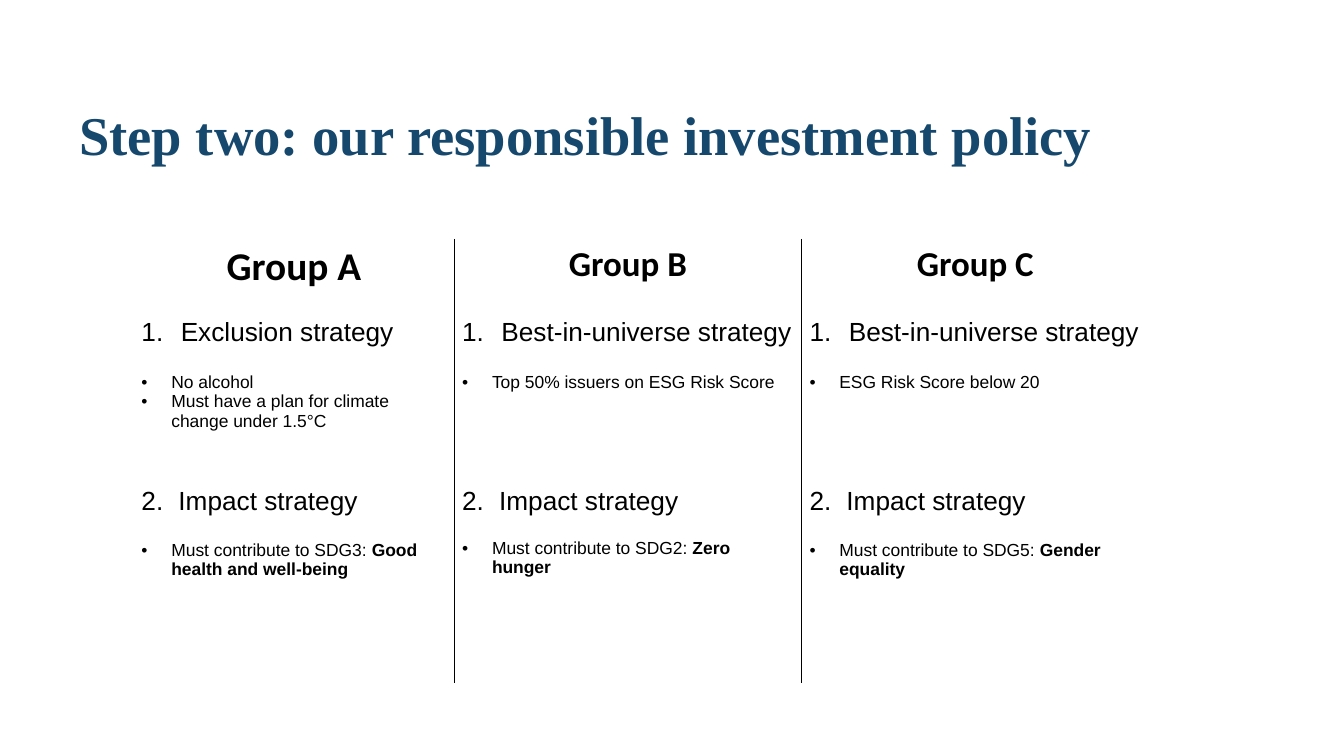
from lxml import etree
from pptx import Presentation
from pptx.dml.color import RGBColor
from pptx.enum.text import MSO_ANCHOR, PP_ALIGN
from pptx.oxml.ns import qn
from pptx.util import Emu, Pt

PX = 9144
CENTER, LEFT, TOP = PP_ALIGN.CENTER, PP_ALIGN.LEFT, MSO_ANCHOR.TOP
NAVY, BLACK = "16486D", "000000"
BLANK_LAYOUT = 6
COLUMN_WIDTHS = [408, 442, 442]
ROW_HEIGHTS = [96, 152, 52, 131, 120]
GROUPS = [
    {"name": "Group A", "size": 36, "strategy": "Exclusion strategy",
     "rules": ["No alcohol", "Must have a plan for climate change under 1.5°C"],
     "goal": "SDG3", "aim": "Good health and well-being", "impact_gap": 23},
    {"name": "Group B", "size": 32, "strategy": "Best-in-universe strategy",
     "rules": ["Top 50% issuers on ESG Risk Score"],
     "goal": "SDG2", "aim": "Zero hunger", "impact_gap": 21},
    {"name": "Group C", "size": 32, "strategy": "Best-in-universe strategy",
     "rules": ["ESG Risk Score below 20"],
     "goal": "SDG5", "aim": "Gender equality", "impact_gap": 23},
]


def px(length):
    """Turn px into EMU."""
    return Emu(length * PX)


def color(hex_string):
    """Turn a hex string into a colour."""
    return RGBColor.from_string(hex_string)


def add_text(frame, *parts, size=16, font="Arial", fill=BLACK, bold=False,
             align=LEFT, before=0, indent=0, bullet=None, number=None):
    """Add a paragraph of text parts; a part may be a (text, bold) pair."""
    first = frame.paragraphs[0]
    paragraph = first if not first.runs else frame.add_paragraph()
    paragraph.alignment = align
    if before:
        paragraph.space_before = Pt(before)
    properties = paragraph._p.get_or_add_pPr()
    if indent:
        properties.set("marL", str(px(indent)))
        properties.set("indent", str(px(-indent)))
    if bullet:
        etree.SubElement(properties, qn("a:buFont"), typeface="Arial")
        etree.SubElement(properties, qn("a:buChar"), char=bullet)
    if number:
        etree.SubElement(properties, qn("a:buFont"), typeface="+mj-lt")
        etree.SubElement(properties, qn("a:buAutoNum"), type="arabicPeriod", startAt=str(number))
    for part in parts:
        text, strong = part if isinstance(part, tuple) else (part, bold)
        run = paragraph.add_run()
        run.text = text
        run.font.size, run.font.name, run.font.bold = Pt(size), font, strong
        run.font.color.rgb = color(fill)


def format_cell(cell, sides):
    """Clear the fill of a cell and draw borders on the given sides only."""
    properties = cell._tc.get_or_add_tcPr()
    for side in "LRTB":
        line = etree.SubElement(properties, qn(f"a:ln{side}"), w=str(Pt(1)))
        if side in sides:
            fill = etree.SubElement(line, qn("a:solidFill"))
            etree.SubElement(fill, qn("a:srgbClr"), val=BLACK)
        else:
            etree.SubElement(line, qn("a:noFill"))
    cell.fill.background()


def add_title(slide, left, top, width, height):
    """Place the slide title in its box."""
    frame = slide.shapes.add_textbox(px(left), px(top), px(width), px(height)).text_frame
    frame.word_wrap = True
    frame.vertical_anchor = TOP
    frame.margin_top = px(10)
    add_text(frame, "Step two: our responsible investment policy",
             size=50, font="Times New Roman", fill=NAVY, bold=True)


def fill_group(cells, group):
    """Write the heading and both strategies of one group down its column."""
    heading, strategy, _, impact, _ = [cell.text_frame for cell in cells]
    add_text(heading, group["name"], size=group["size"], font="Calibri", bold=True, align=CENTER)
    add_text(strategy, group["strategy"], size=24, indent=50, number=1)
    for index, rule in enumerate(group["rules"]):
        add_text(strategy, rule, before=0 if index else 23, indent=38, bullet="•")
    add_text(impact, "Impact strategy", size=24, indent=47, number=2)
    add_text(impact, f"Must contribute to {group['goal']}: ", (group["aim"], True),
             before=group["impact_gap"], indent=38, bullet="•")


def add_policy_table(slide, left, top):
    """Place the table with one column for each group."""
    table = slide.shapes.add_table(len(ROW_HEIGHTS), len(GROUPS), px(left), px(top),
                                   px(sum(COLUMN_WIDTHS)), px(sum(ROW_HEIGHTS))).table
    table.first_row = table.horz_banding = False
    for row, height in zip(table.rows, ROW_HEIGHTS):
        row.height = px(height)
    for index, group in enumerate(GROUPS):
        table.columns[index].width = px(COLUMN_WIDTHS[index])
        cells = [table.cell(row, index) for row in range(len(ROW_HEIGHTS))]
        sides = ("L" if index else "") + ("R" if index < len(GROUPS) - 1 else "")
        for cell in cells:
            format_cell(cell, sides)
        fill_group(cells, group)


def main():
    """Build and save the presentation."""
    presentation = Presentation()
    presentation.slide_width, presentation.slide_height = px(1710), px(962)
    slide = presentation.slides.add_slide(presentation.slide_layouts[BLANK_LAYOUT])
    add_title(slide, 91, 119, 1345, 84)
    add_policy_table(slide, 170, 304)
    presentation.save("out.pptx")


if __name__ == "__main__":
    main()
